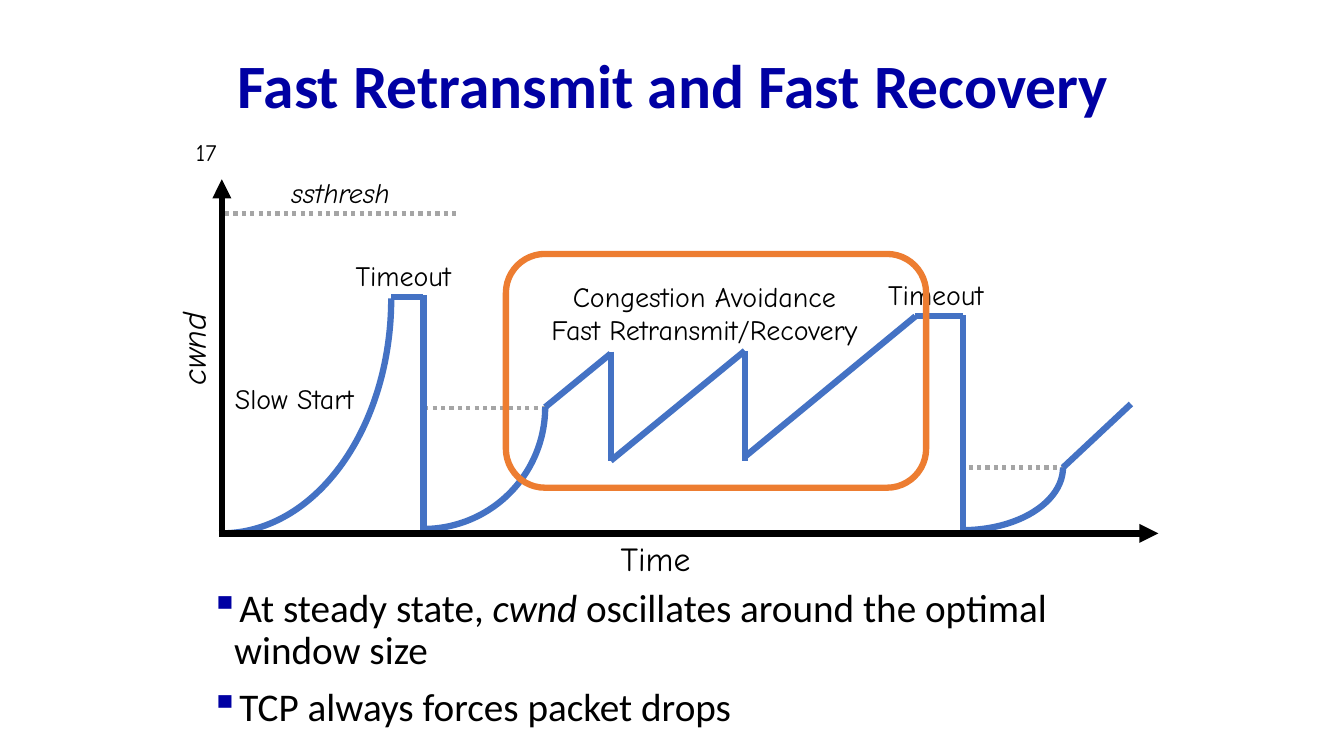
from itertools import pairwise

from lxml.etree import SubElement
from pptx import Presentation
from pptx.dml.color import RGBColor
from pptx.enum.dml import MSO_LINE
from pptx.enum.shapes import MSO_CONNECTOR, MSO_SHAPE
from pptx.enum.text import MSO_ANCHOR, PP_ALIGN
from pptx.oxml.ns import qn
from pptx.util import Cm, Pt

COLORS = {"title": "0000A3", "text": "000000", "axis": "000000",
          "curve": "4472C4", "threshold": "A5A5A5", "highlight": "ED7D31"}
BODY_FONT, LABEL_FONT = "Calibri", "Comic Neue"


def rgb(name):
    return RGBColor.from_string(COLORS[name])


def format_run(r, size, font, color="text", bold=False, italic=False):
    r.font.size, r.font.name = Pt(size), font
    r.font.bold, r.font.italic = bold, italic
    r.font.color.rgb = rgb(color)


def add_label(s, box, text, size, italic=False, align=PP_ALIGN.LEFT, wrap=False):
    sp = s.shapes.add_textbox(*map(Cm, box))
    tf = sp.text_frame
    tf.word_wrap = wrap
    tf.text = text
    for p in tf.paragraphs:
        p.alignment = align
        format_run(p.runs[0], size, LABEL_FONT, italic=italic)
    return sp


def add_line(s, start, end, color, width=4.5, dotted=False, arrow=False):
    line = s.shapes.add_connector(MSO_CONNECTOR.STRAIGHT, *map(Cm, start + end))
    line.line.color.rgb = rgb(color)
    line.line.width = Pt(width)
    if dotted:
        line.line.dash_style = MSO_LINE.ROUND_DOT
    spPr = line._element.spPr
    if arrow:
        SubElement(spPr.find(qn("a:ln")), qn("a:tailEnd"), type="triangle")
    SubElement(spPr, qn("a:effectLst"))


def add_outline(s, kind, box, color):
    sp = s.shapes.add_shape(kind, *map(Cm, box))
    sp.shadow.inherit = False
    sp.fill.background()
    sp.line.color.rgb = rgb(color)
    sp.line.width = Pt(4.5)
    return sp


def add_title(s, box):
    title = s.shapes.title
    title.left, title.top, title.width, title.height = map(Cm, box)
    tf = title.text_frame
    tf.text = "Fast Retransmit and Fast Recovery"
    tf.vertical_anchor = MSO_ANCHOR.MIDDLE
    p = tf.paragraphs[0]
    p.alignment, p.line_spacing = PP_ALIGN.LEFT, 0.9
    format_run(p.runs[0], 44, BODY_FONT, "title", bold=True)


def add_page_number(s, box):
    tf = add_label(s, box, "17", 17, align=PP_ALIGN.RIGHT, wrap=True).text_frame
    tf.vertical_anchor = MSO_ANCHOR.MIDDLE
    tf.paragraphs[0].line_spacing = 0.8


def add_bullets(s, box):
    tf = s.shapes.add_textbox(*map(Cm, box)).text_frame
    tf.word_wrap = True
    bullets = [
        [("At steady state, ", False), ("cwnd", True),
         (" oscillates around the optimal window size", False)],
        [("TCP always forces packet drops", False)],
    ]
    for i, runs in enumerate(bullets):
        p = tf.add_paragraph() if i else tf.paragraphs[0]
        p.line_spacing, p.space_before = 0.9, Pt(10)
        for text, italic in runs:
            r = p.add_run()
            r.text = text
            format_run(r, 28, BODY_FONT, italic=italic)
        pPr = p._p.get_or_add_pPr()
        pPr.set("marL", str(Cm(1)))
        pPr.set("indent", str(-Cm(0.6)))
        SubElement(SubElement(pPr, qn("a:buClr")), qn("a:srgbClr"), val=COLORS["title"])
        SubElement(pPr, qn("a:buChar"), char="▪")


def add_window_plot(s, box):
    left, top, width, height = box

    def at(x, y):
        return left + x, top + y

    # Threshold levels
    for x1, x2, y in [(0.08, 5.99, 0.86), (5.1, 8.18, 5.77), (18.82, 21.2, 7.26)]:
        add_line(s, at(x1, y), at(x2, y), "threshold", 3, dotted=True)

    # Axis names and phase labels
    add_label(s, at(9.8, height) + (2.46, 1.3), "Time", 24)
    add_label(s, at(-1.98, 3.53) + (2.51, 1.3), "cwnd", 24, italic=True).rotation = 270
    add_label(s, at(0.08, 4.98) + (4.14, 1.12), "Slow Start", 20)
    add_label(s, at(1.27, -0.23) + (3.45, 1.12), "ssthresh", 20, True, PP_ALIGN.CENTER)
    add_label(s, at(7.39, 2.39) + (9.55, 1.98),
              "Congestion Avoidance\nFast Retransmit/Recovery", 20,
              align=PP_ALIGN.CENTER, wrap=True)
    for x, y in [(3.12, 1.88), (16.54, 2.34)]:
        add_label(s, at(x, y) + (3.23, 1.12), "Timeout", 20)

    # Slow start: lower right quarter of an ellipse
    for x1, x2, y1, y2 in [(0, 4.27, 3, 8.92), (5.08, 8.15, 5.74, 8.81),
                           (18.67, 21.2, 7.26, 8.84)]:
        rx, ry = x2 - x1, y2 - y1
        arc = add_outline(s, MSO_SHAPE.ARC, at(x1 - rx, y1 - ry) + (2 * rx, 2 * ry), "curve")
        arc.adjustments[0], arc.adjustments[1] = 0, 54

    # Timeouts, linear growth and halving of the window
    tracks = [
        [(4.27, 2.97), (5.08, 2.97)],
        [(5.08, 2.92), (5.08, 8.84)],
        [(8.15, 5.74), (9.8, 4.39)],
        [(9.8, 4.34), (9.8, 7.09), (13.18, 4.32), (13.18, 7.09)],
        [(13.18, 6.99), (17.48, 3.45), (18.67, 3.45)],
        [(18.67, 3.43), (18.67, height)],
        [(21.2, 7.26), (22.91, 5.66)],
    ]
    for track in tracks:
        for start, end in pairwise(track):
            add_line(s, at(*start), at(*end), "curve")

    # Axes
    add_line(s, at(0, height), at(0, 0), "axis", arrow=True)
    add_line(s, at(-0.08, height), at(width, height), "axis", arrow=True)

    # Highlighted phase
    add_outline(s, MSO_SHAPE.ROUNDED_RECTANGLE, at(7.16, 1.88) + (10.59, 5.89), "highlight")


def main():
    prs = Presentation()
    prs.slide_width, prs.slide_height = Cm(33.87), Cm(19.05)
    s = prs.slides.add_slide(prs.slide_layouts[5])
    add_title(s, (5.72, 0.64, 22.78, 3.18))
    add_bullets(s, (4.65, 14.71, 24.56, 4.34))
    add_page_number(s, (4.24, 3.48, 1.47, 0.84))
    add_window_plot(s, (5.59, 4.52, 23.6, 8.92))
    prs.save("out.pptx")


if __name__ == "__main__":
    main()
